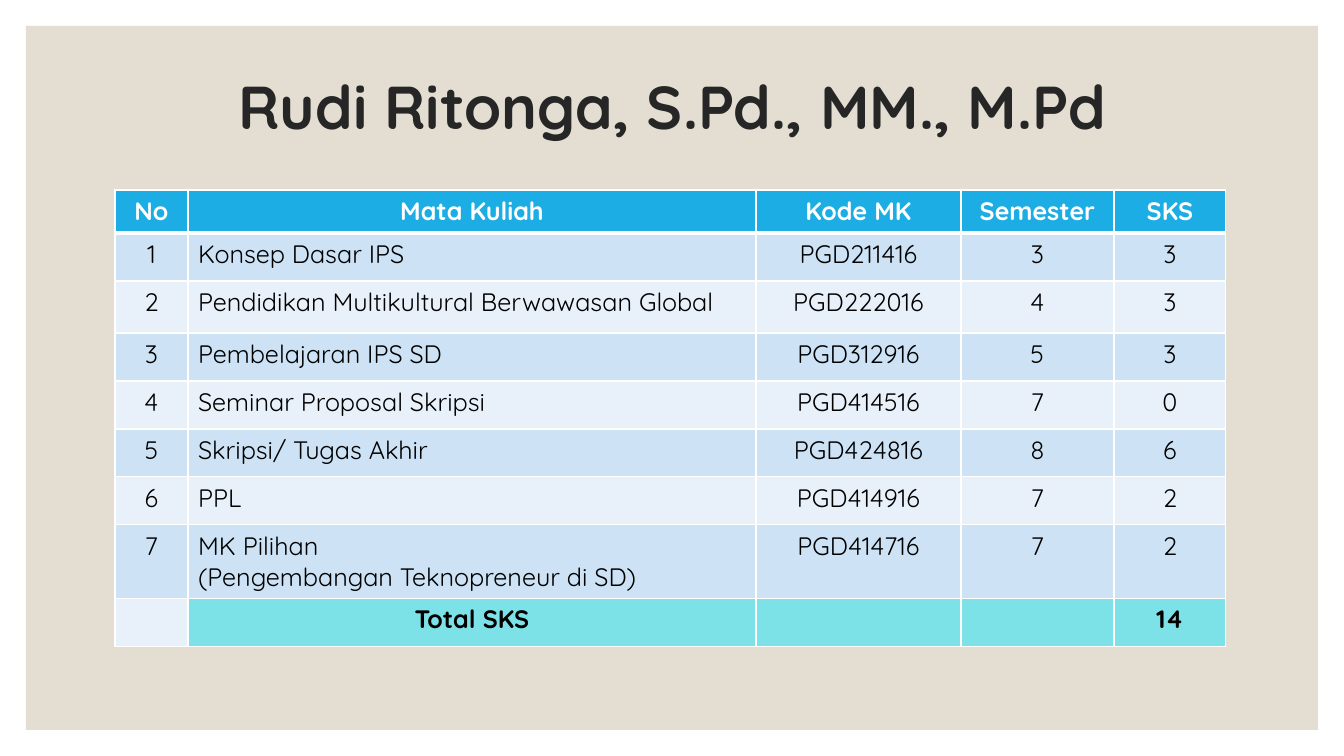
from lxml.etree import SubElement
from pptx import Presentation
from pptx.dml.color import RGBColor
from pptx.enum.shapes import MSO_SHAPE
from pptx.enum.text import MSO_ANCHOR, MSO_AUTO_SIZE, PP_ALIGN
from pptx.oxml import parse_xml
from pptx.oxml.ns import nsdecls, qn
from pptx.util import Pt

TITLE = "Rudi Ritonga, S.Pd., MM., M.Pd"
COURSES = [
    ("No", "Mata Kuliah", "Kode MK", "Semester", "SKS"),
    ("1", "Konsep Dasar IPS", "PGD211416", "3", "3"),
    ("2", "Pendidikan Multikultural Berwawasan Global", "PGD222016", "4", "3"),
    ("3", "Pembelajaran IPS SD", "PGD312916", "5", "3"),
    ("4", "Seminar Proposal Skripsi", "PGD414516", "7", "0"),
    ("5", "Skripsi/ Tugas Akhir", "PGD424816", "8", "6"),
    ("6", "PPL", "PGD414916", "7", "2"),
    ("7", "MK Pilihan\n(Pengembangan Teknopreneur di SD)", "PGD414716", "7", "2"),
    ("", "Total SKS", "", "", "14"),
]
COLUMN_WIDTHS = (73, 568, 205, 153, 112)
ROW_HEIGHTS = (43, 48, 52) + (48,) * 6
LAST = len(COURSES) - 1

FONT = "Quicksand"
WHITE = RGBColor(0xFF, 0xFF, 0xFF)
BLACK = RGBColor(0x00, 0x00, 0x00)
CHARCOAL = RGBColor(0x26, 0x26, 0x26)
SAND = RGBColor(0xE3, 0xDE, 0xD1)
BLUE = RGBColor(0x1C, 0xAD, 0xE4)
BANDS = (RGBColor(0xE8, 0xF1, 0xFA), RGBColor(0xCD, 0xE3, 0xF5))
TURQUOISE = RGBColor(0x7D, 0xE2, 0xE7)


def px(length):
    return round(length * 914400 / 100.8)


def box(*lengths):
    return [px(length) for length in lengths]


def write(frame, text, align, size, color, bold):
    frame.text = text
    values = {"name": FONT, "size": Pt(size), "bold": bold}
    for paragraph in frame.paragraphs:
        paragraph.alignment = align
        for run in paragraph.runs:
            run.font.color.rgb = color
            for key, value in values.items():
                setattr(run.font, key, value)


def add_borders(cell, row):
    properties = cell._tc.get_or_add_tcPr()
    widths = {"lnL": 1, "lnR": 1, "lnT": 3 if row == 1 else 1, "lnB": 3 if row == 0 else 1}
    for index, (side, width) in enumerate(widths.items()):
        line = parse_xml(f'<a:{side} {nsdecls("a")} w="{Pt(width)}"/>')
        fill = SubElement(line, qn("a:solidFill"))
        SubElement(fill, qn("a:srgbClr"), val=str(WHITE))
        properties.insert(index, line)


def cell_fill(row, column):
    if row == 0:
        return BLUE
    if row == LAST and column > 0:
        return TURQUOISE
    return BANDS[row % 2]


def add_title(slide):
    title = slide.shapes.title
    title.left, title.top, title.width, title.height = box(118, 71, 1109, 78)
    write(title.text_frame, TITLE, PP_ALIGN.CENTER, 43.2, CHARCOAL, True)
    title.text_frame.paragraphs[0].line_spacing = 0.9
    values = {"word_wrap": True, "auto_size": MSO_AUTO_SIZE.NONE, "vertical_anchor": MSO_ANCHOR.MIDDLE}
    for key, value in values.items():
        setattr(title.text_frame, key, value)
    return title


def add_panel(slide, title):
    panel = slide.shapes.add_shape(MSO_SHAPE.RECTANGLE, *box(26, 26, 1292, 704))
    panel.shadow.inherit = False
    panel.fill.solid()
    panel.fill.fore_color.rgb = SAND
    panel.line.fill.background()
    title.element.addprevious(panel.element)


def add_courses(slide):
    size = (len(COURSES), len(COLUMN_WIDTHS))
    area = box(115, 190, sum(COLUMN_WIDTHS), sum(ROW_HEIGHTS))
    table = slide.shapes.add_table(*size, *area).table
    for column, width in zip(table.columns, COLUMN_WIDTHS):
        column.width = px(width)
    for row, height in zip(table.rows, ROW_HEIGHTS):
        row.height = px(height)
    for row, course in enumerate(COURSES):
        emphasized = row in (0, LAST)
        for column, text in enumerate(course):
            cell = table.cell(row, column)
            cell.fill.solid()
            cell.fill.fore_color.rgb = cell_fill(row, column)
            add_borders(cell, row)
            align = PP_ALIGN.LEFT if column == 1 and not emphasized else PP_ALIGN.CENTER
            write(cell.text_frame, text, align, 18, BLACK if row else WHITE, emphasized)


def main():
    presentation = Presentation()
    presentation.slide_width, presentation.slide_height = box(1344, 756)
    slide = presentation.slides.add_slide(presentation.slide_layouts[5])
    title = add_title(slide)
    add_panel(slide, title)
    add_courses(slide)
    presentation.save("out.pptx")


if __name__ == "__main__":
    main()
